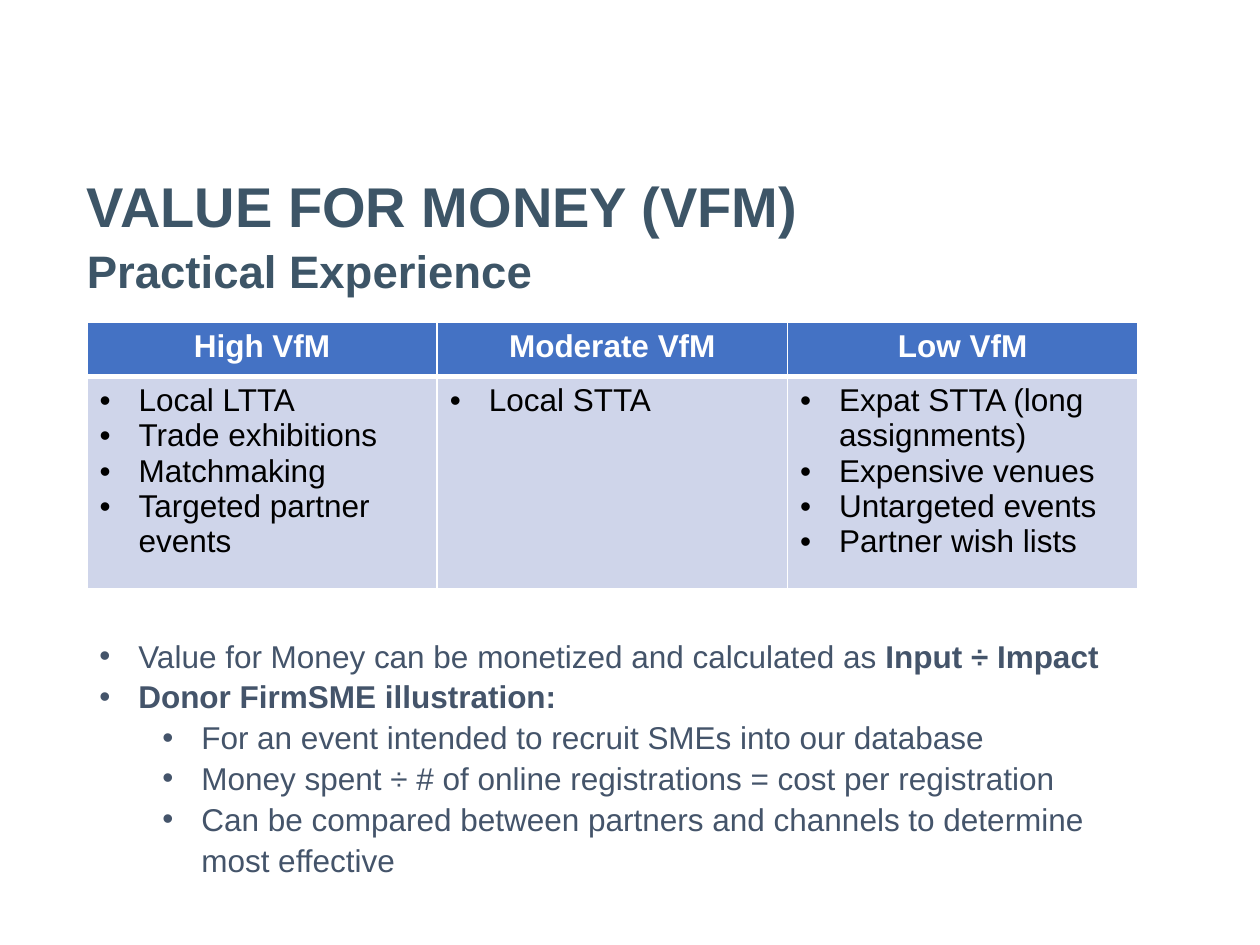
"""Build the Value for Money slide: heading, comparison table and notes."""
from lxml import etree
from pptx import Presentation, util as u
from pptx.dml.color import RGBColor
from pptx.enum import text as t
from pptx.oxml.ns import qn

THEME = {
    "font": "Arial", "title": 32, "sub": 26, "body": 18, "lead": 1.08,
    "head": "3D5567", "note": "44546A", "bar": "4472C4",
    "cell": "CFD5EA", "white": "FFFFFF", "black": "000000",
}
TITLE = ("VALUE FOR MONEY (VFM)", "Practical Experience")
TABLE = {
    "High VfM": ["Local LTTA", "Trade exhibitions", "Matchmaking",
                 "Targeted partner events"],
    "Moderate VfM": ["Local STTA"],
    "Low VfM": ["Expat STTA (long assignments)", "Expensive venues",
                "Untargeted events", "Partner wish lists"],
}
NOTES = [
    (0, [("Value for Money can be monetized and calculated as ", False),
         ("Input ÷ Impact", True)]),
    (0, [("Donor FirmSME illustration:", True)]),
    (1, [("For an event intended to recruit SMEs into our database", False)]),
    (1, [("Money spent ÷ # of online registrations = cost per registration", False)]),
    (1, [("Can be compared between partners and channels to determine most effective",
          False)]),
]
LEFT, COL = 0.69, 2.78
WIDTH = COL * len(TABLE)
ROWS = (0.43, 1.68)
TOPS = {"title": 1.32, "table": 2.56, "notes": 4.98}
HANG, STEP = 0.31, 0.5


def style(run, size, color, bold=False):
    """Set the font of one run."""
    font = run.font
    font.name, font.size, font.bold = THEME["font"], u.Pt(size), bold
    font.color.rgb = RGBColor.from_string(color)


def bullet(para, level=0):
    """Give a paragraph a hanging bullet."""
    para.level = level
    props = para._p.get_or_add_pPr()
    props.set("marL", str(u.Inches(HANG + STEP * level)))
    props.set("indent", str(-u.Inches(HANG)))
    etree.SubElement(props, qn("a:buFont"), typeface=THEME["font"])
    etree.SubElement(props, qn("a:buChar"), char="•")


def lines(frame, count):
    """Return the given number of paragraphs of a frame."""
    while len(frame.paragraphs) < count:
        frame.add_paragraph()
    return frame.paragraphs


def box(slide, top, high):
    """Add a wrapping text box as wide as the table."""
    frame = slide.shapes.add_textbox(
        u.Inches(LEFT), u.Inches(top), u.Inches(WIDTH), u.Inches(high)).text_frame
    frame.word_wrap = True
    return frame


def paint(cell, color, base):
    """Fill a cell and draw its white borders."""
    props = cell._tc.get_or_add_tcPr()
    for side in "LRTB":
        wide = base if side == "B" else 1
        line = etree.SubElement(props, qn(f"a:ln{side}"), w=str(u.Pt(wide)))
        fill = etree.SubElement(line, qn("a:solidFill"))
        etree.SubElement(fill, qn("a:srgbClr"), val=THEME["white"])
    cell.fill.solid()
    cell.fill.fore_color.rgb = RGBColor.from_string(color)


def title(slide):
    """Add the two-line heading."""
    frame = box(slide, TOPS["title"], 0.93)
    frame.margin_left = frame.margin_right = 0
    frame.margin_top = frame.margin_bottom = 0
    para = frame.paragraphs[0]
    para.text = "\v".join(TITLE)
    para.line_spacing = THEME["lead"]
    for run, size in zip(para.runs, ("title", "sub")):
        style(run, THEME[size], THEME["head"], True)


def table(slide):
    """Add the comparison table."""
    grid = slide.shapes.add_table(
        len(ROWS), len(TABLE), u.Inches(LEFT), u.Inches(TOPS["table"]),
        u.Inches(WIDTH), u.Inches(sum(ROWS))).table
    for row, high in zip(grid.rows, ROWS):
        row.height = u.Inches(high)
    for col, (name, items) in enumerate(TABLE.items()):
        grid.columns[col].width = u.Inches(COL)
        head, body = grid.cell(0, col), grid.cell(1, col)
        paint(head, THEME["bar"], 3)
        paint(body, THEME["cell"], 1)
        head.text_frame.text = name
        para = head.text_frame.paragraphs[0]
        para.alignment = t.PP_ALIGN.CENTER
        style(para.runs[0], THEME["body"], THEME["white"], True)
        for para, item in zip(lines(body.text_frame, len(items)), items):
            para.text = item
            bullet(para)
            style(para.runs[0], THEME["body"], THEME["black"])


def notes(slide):
    """Add the bulleted text below the table."""
    frame = box(slide, TOPS["notes"], 2.22)
    for para, (level, parts) in zip(lines(frame, len(NOTES)), NOTES):
        para.line_spacing = THEME["lead"]
        bullet(para, level)
        for words, bold in parts:
            run = para.add_run()
            run.text = words
            style(run, THEME["body"], THEME["note"], bold)


def main():
    """Build and save the deck."""
    deck = Presentation()
    deck.slide_width, deck.slide_height = u.Inches(10), u.Inches(7.5)
    slide = deck.slides.add_slide(deck.slide_layouts[6])
    for part in (title, table, notes):
        part(slide)
    deck.save("out.pptx")


if __name__ == "__main__":
    main()
